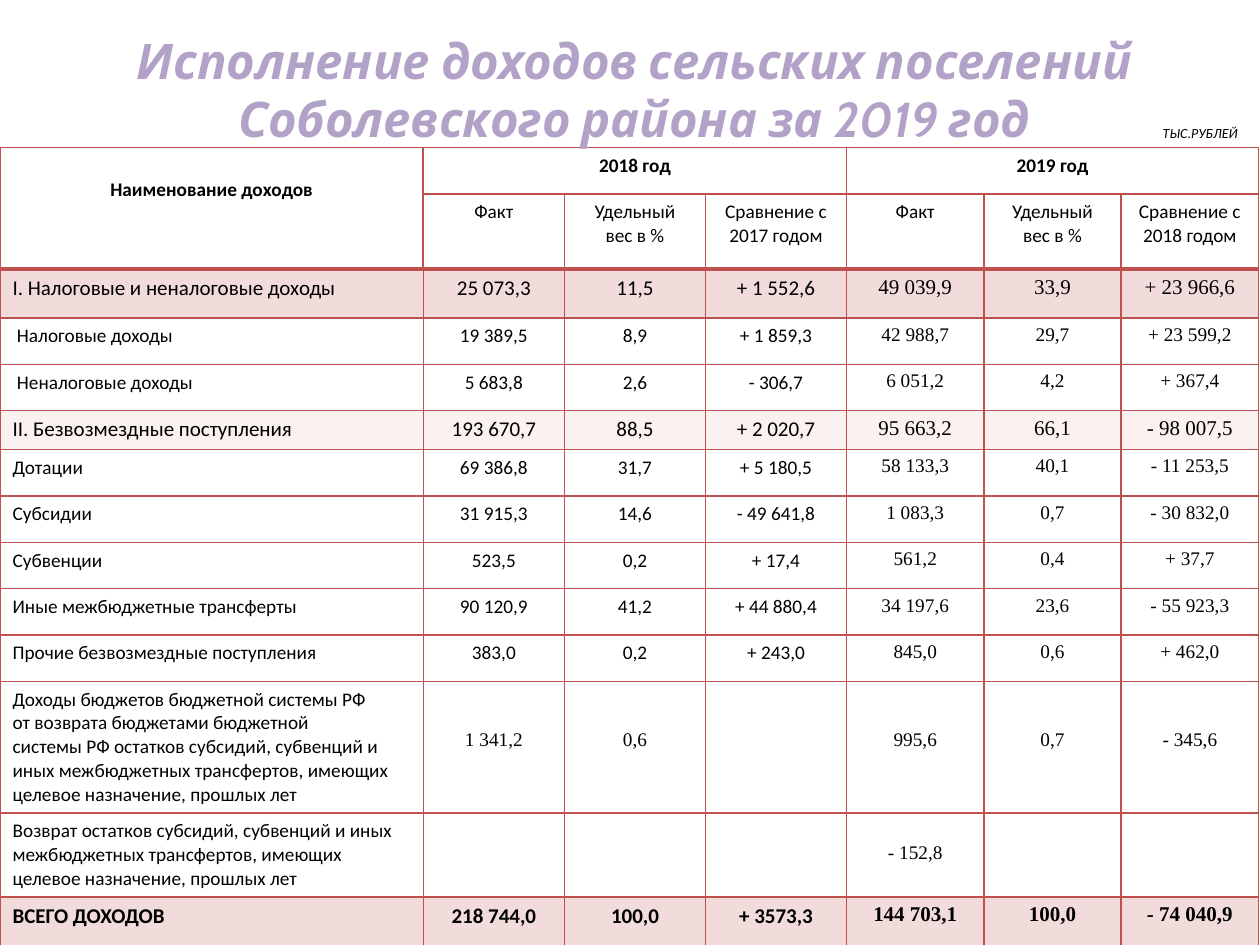
from lxml import etree
from pptx import Presentation, util as u
from pptx.dml.color import RGBColor
from pptx.enum import text
from pptx.oxml import ns

BLACK = RGBColor(0x00, 0x00, 0x00)
LILAC = RGBColor(0xB3, 0xA2, 0xC7)
RED = RGBColor(0xC0, 0x50, 0x4D)
PINK = RGBColor(0xF2, 0xDC, 0xDB)
ROSE = RGBColor(0xE6, 0xB9, 0xB8)

LEFT, MID = text.PP_ALIGN.LEFT, text.PP_ALIGN.CENTER
SANS, SERIF = "Calibri", "Times New Roman"
WIDTHS = [3.36] + [1.12] * 3 + [1.09] * 3
HEIGHTS = [0.37, 0.6, 0.39, 0.37, 0.37, 0.31] + [0.37] * 5 + [1.04, 0.67, 0.39]
TOP, TALL = 1.17, 6.33

HEAD = [
    ["Наименование доходов", "2018 год", "", "", "2019 год", "", ""],
    ["", "Факт", "Удельный\nвес в %", "Сравнение с 2017 годом",
     "Факт", "Удельный\nвес в %", "Сравнение с 2018 годом"],
]
BODY = [
    ["I. Налоговые и неналоговые доходы", "25 073,3", "11,5", "+ 1 552,6", "49 039,9", "33,9", "+ 23 966,6"],
    [" Налоговые доходы", "19 389,5", "8,9", "+ 1 859,3", "42 988,7", "29,7", "+ 23 599,2"],
    [" Неналоговые доходы", "5 683,8", "2,6", "- 306,7", "6 051,2", "4,2", "+ 367,4"],
    ["II. Безвозмездные поступления", "193 670,7", "88,5", "+ 2 020,7", "95 663,2", "66,1", "- 98 007,5"],
    ["Дотации", "69 386,8", "31,7", "+ 5 180,5", "58 133,3", "40,1", "- 11 253,5"],
    ["Субсидии", "31 915,3", "14,6", "- 49 641,8", "1 083,3", "0,7", "- 30 832,0"],
    ["Субвенции", "523,5", "0,2", "+ 17,4", "561,2", "0,4", "+ 37,7"],
    ["Иные межбюджетные трансферты", "90 120,9", "41,2", "+ 44 880,4", "34 197,6", "23,6", "- 55 923,3"],
    ["Прочие безвозмездные поступления", "383,0", "0,2", "+ 243,0", "845,0", "0,6", "+ 462,0"],
    ["Доходы бюджетов бюджетной системы РФ\nот возврата бюджетами бюджетной\n"
     "системы РФ остатков субсидий, субвенций и\n"
     "иных межбюджетных трансфертов, имеющих целевое назначение, прошлых лет",
     "1 341,2", "0,6", "", "995,6", "0,7", "- 345,6"],
    ["Возврат остатков субсидий, субвенций и иных межбюджетных трансфертов, "
     "имеющих целевое назначение, прошлых лет", "", "", "", "- 152,8", "", ""],
    ["ВСЕГО ДОХОДОВ", "218 744,0", "100,0", "+ 3573,3", "144 703,1", "100,0", "- 74 040,9"],
]
FIRST = len(HEAD)
REFUND, RETURN, TOTAL = 11, 12, 13
FILLS = {2: (PINK, 100), 5: (ROSE, 20), TOTAL: (PINK, 100)}
DROPS = {REFUND: 0.38, RETURN: 0.23}


class Deck:
    def __init__(self):
        self.prs = Presentation()
        self.prs.slide_width, self.prs.slide_height = u.Inches(10), u.Inches(7.5)
        self.slide = self.prs.slides.add_slide(self.prs.slide_layouts[6])

    def put(self, frame, words, size, face=SANS, color=BLACK, align=LEFT, bold=False, slant=False):
        frame.word_wrap = True
        frame.text = words
        for para in frame.paragraphs:
            para.alignment = align
            font = para.font
            font.size, font.name = u.Pt(size), face
            font.bold, font.italic = bold, slant
            font.color.rgb = color

    def label(self, box, words, size, anchor=text.MSO_ANCHOR.TOP, **style):
        frame = self.slide.shapes.add_textbox(*map(u.Inches, box)).text_frame
        frame.vertical_anchor = anchor
        self.put(frame, words, size, **style)

    def grid(self, rows):
        box = map(u.Inches, (0, TOP, sum(WIDTHS), TALL))
        table = self.slide.shapes.add_table(len(rows), len(WIDTHS), *box).table
        table.first_row = table.horz_banding = False
        for col, wide in zip(table.columns, WIDTHS):
            col.width = u.Inches(wide)
        for row, high in zip(table.rows, HEIGHTS):
            row.height = u.Inches(high * TALL / sum(HEIGHTS))
        for r, row in enumerate(rows):
            for c, words in enumerate(row):
                self.cell(table.cell(r, c), r, c, words)
        for r, c, end in ((0, 0, (1, 0)), (0, 1, (0, 3)), (0, 4, (0, 6))):
            table.cell(r, c).merge(table.cell(*end))

    def cell(self, cell, r, c, words):
        self.edge(cell, r, c)
        if r in FILLS:
            self.tint(cell, *FILLS[r])
        else:
            cell.fill.background()
        if r == 0 and c == 0:
            cell.margin_top = u.Inches(0.24)
        elif c and r in DROPS:
            cell.margin_top = u.Inches(DROPS[r])
        if words:
            serif = r >= FIRST and (c > 3 or c and r == REFUND)
            self.put(cell.text_frame, words, 12 if r in FILLS else 11,
                     face=SERIF if serif else SANS,
                     align=MID if c or r < FIRST else LEFT, bold=r in (0, TOTAL))

    def edge(self, cell, r, c):
        head = r < FIRST
        widths = {
            "L": 1.5 if head and c == 1 else 1,
            "R": 1.5 if head and c == 0 else 1,
            "T": {1: 1.5, 2: 2.25}.get(r, 1) if c else 1,
            "B": {0: 1.5, 1: 2.25}.get(r, 1) if c else 2 if head else 1,
        }
        props = cell._tc.get_or_add_tcPr()
        for side, wide in widths.items():
            line = etree.SubElement(props, ns.qn(f"a:ln{side}"), w=str(u.Pt(wide)))
            fill = etree.SubElement(line, ns.qn("a:solidFill"))
            etree.SubElement(fill, ns.qn("a:srgbClr"), val=str(RED))

    def tint(self, cell, color, alpha):
        cell.fill.solid()
        cell.fill.fore_color.rgb = color
        if alpha < 100:
            node = cell._tc.tcPr.find(ns.qn("a:solidFill"))[0]
            etree.SubElement(node, ns.qn("a:alpha"), val=str(alpha * 1000))


def main():
    deck = Deck()
    deck.grid(HEAD + BODY)
    deck.label((9.13, 0.94, 0.87, 0.24), "ТЫС.РУБЛЕЙ", 8, slant=True)
    deck.label((0.23, 0.16, 9.61, 1.09),
               "Исполнение доходов сельских поселений\nСоболевского района за 2019 год", 28,
               anchor=text.MSO_ANCHOR.MIDDLE, face="Cabin", color=LILAC,
               align=MID, bold=True, slant=True)
    deck.prs.save("out.pptx")


if __name__ == "__main__":
    main()
